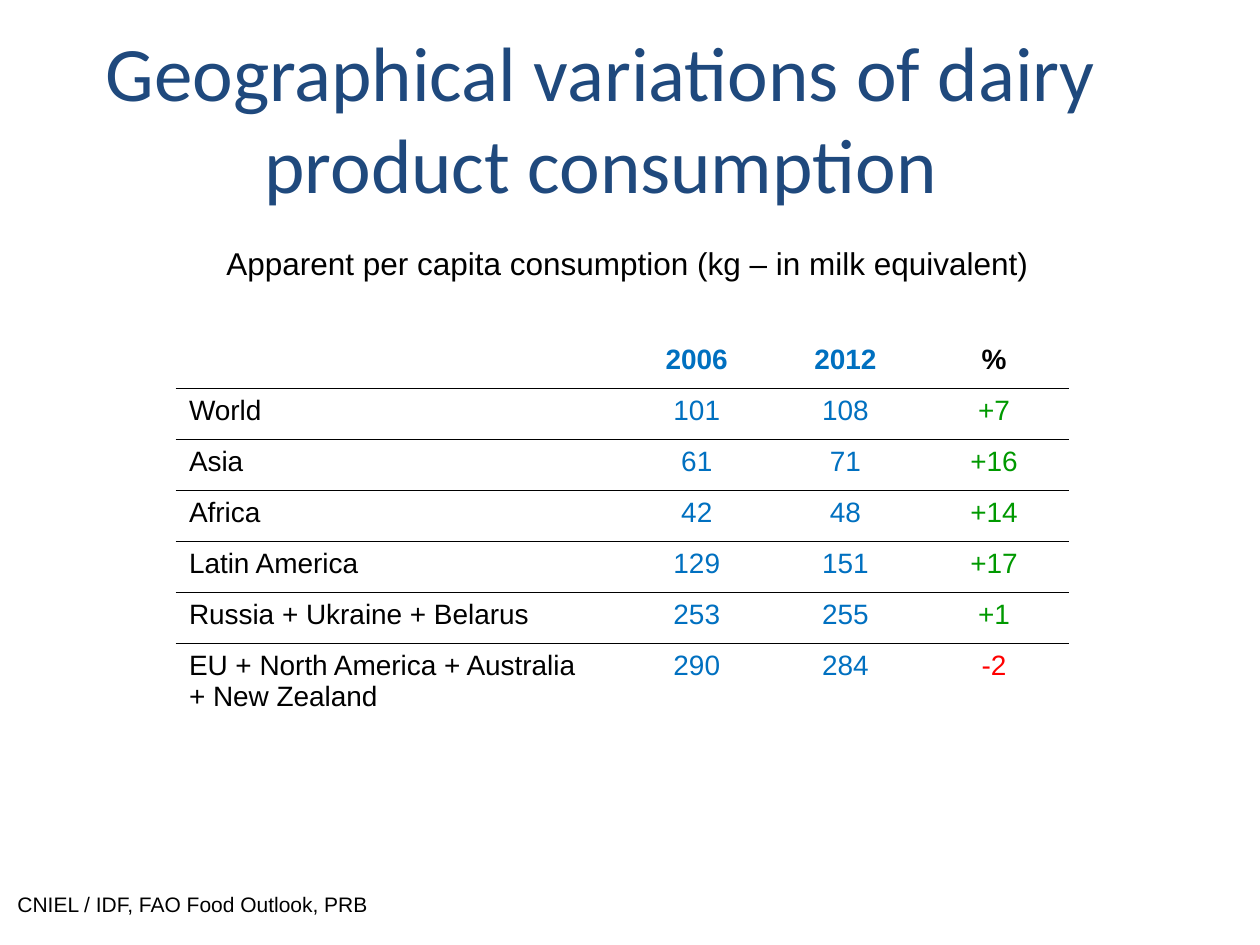
import pptx
import pptx.dml.color
import pptx.enum.text
import pptx.util
from lxml import etree
from pptx.oxml.ns import qn
from pptx.util import Inches

COLORS = {"title": "1F497D", "text": "000000", "year": "0070C0",
          "rise": "009900", "fall": "FF0000", "paper": "FFFFFF"}
ALIGN = pptx.enum.text.PP_ALIGN
ANCHOR = pptx.enum.text.MSO_ANCHOR

# Content
TITLE = "Geographical variations of dairy product consumption"
CAPTION = "Apparent per capita consumption (kg – in milk equivalent)"
CREDIT = "CNIEL / IDF, FAO Food Outlook, PRB"
ROWS = [
    ("", "2006", "2012", "%"),
    ("World", "101", "108", "+7"),
    ("Asia", "61", "71", "+16"),
    ("Africa", "42", "48", "+14"),
    ("Latin America", "129", "151", "+17"),
    ("Russia + Ukraine + Belarus", "253", "255", "+1"),
    ("EU + North America + Australia\n+ New Zealand", "290", "284", "-2"),
]
COLUMN_WIDTHS = [3.54, 1.18, 1.18, 1.18]
ROW_HEIGHT = Inches(2.43) // 6


def rgb(name):
    return pptx.dml.color.RGBColor.from_string(COLORS[name])


def write(frame, text, size, color, align, font="Arial", bold=False):
    for index, line in enumerate(text.split("\n")):
        para = frame.add_paragraph() if index else frame.paragraphs[0]
        para.alignment = align
        para.font.size = pptx.util.Pt(size)
        if line:
            span = para.add_run()
            span.text = line
            span.font.size = pptx.util.Pt(size)
            span.font.name = font
            span.font.bold = bold
            span.font.color.rgb = rgb(color)


def add_text(page, place, text, size, color, align, font="Arial", wrap=False):
    box = page.shapes.add_textbox(*map(Inches, place))
    box.text_frame.word_wrap = wrap
    box.text_frame.vertical_anchor = ANCHOR.MIDDLE if wrap else ANCHOR.TOP
    write(box.text_frame, text, size, color, align, font)


def set_borders(cell, top, bottom):
    sides = {"lnL": "paper", "lnR": "paper", "lnT": top, "lnB": bottom}
    properties = cell._tc.get_or_add_tcPr()
    for index, (side, color) in enumerate(sides.items()):
        line = etree.Element(qn("a:" + side), w=str(pptx.util.Pt(1)))
        fill = etree.SubElement(line, qn("a:solidFill"))
        etree.SubElement(fill, qn("a:srgbClr"), val=COLORS[color])
        properties.insert(index, line)


def cell_color(row, column, text):
    if column in (1, 2):
        return "year"
    if row == 0 or column == 0:
        return "text"
    return "fall" if text.startswith("-") else "rise"


def add_data(page):
    frame = page.shapes.add_table(
        len(ROWS), len(COLUMN_WIDTHS), Inches(1.4), Inches(2.68),
        Inches(sum(COLUMN_WIDTHS)), ROW_HEIGHT * len(ROWS))
    table = frame.table
    table.first_row = table.horz_banding = False
    for column, width in zip(table.columns, COLUMN_WIDTHS):
        column.width = Inches(width)
    for r, values in enumerate(ROWS):
        table.rows[r].height = ROW_HEIGHT
        for c, text in enumerate(values):
            cell = table.cell(r, c)
            cell.fill.solid()
            cell.fill.fore_color.rgb = rgb("paper")
            # Black rules only between rows
            set_borders(cell, "text" if r else "paper",
                        "text" if r < len(ROWS) - 1 else "paper")
            write(cell.text_frame, text, 16, cell_color(r, c, text),
                  ALIGN.CENTER if c else ALIGN.LEFT, bold=r == 0)


def main():
    deck = pptx.Presentation()
    deck.slide_width, deck.slide_height = Inches(10), Inches(7.5)
    page = deck.slides.add_slide(deck.slide_layouts[6])

    # Title, source credit and table caption
    add_text(page, (0.04, 0.3, 9.46, 1.25), TITLE, 44, "title",
             ALIGN.CENTER, "Calibri", wrap=True)
    add_text(page, (0.04, 7.03, 3.01, 0.3), CREDIT, 12, "text", ALIGN.LEFT)
    add_text(page, (1.63, 1.89, 6.7, 0.4), CAPTION, 18, "text", ALIGN.CENTER)

    # Consumption by region
    add_data(page)
    deck.save("out.pptx")


if __name__ == "__main__":
    main()
